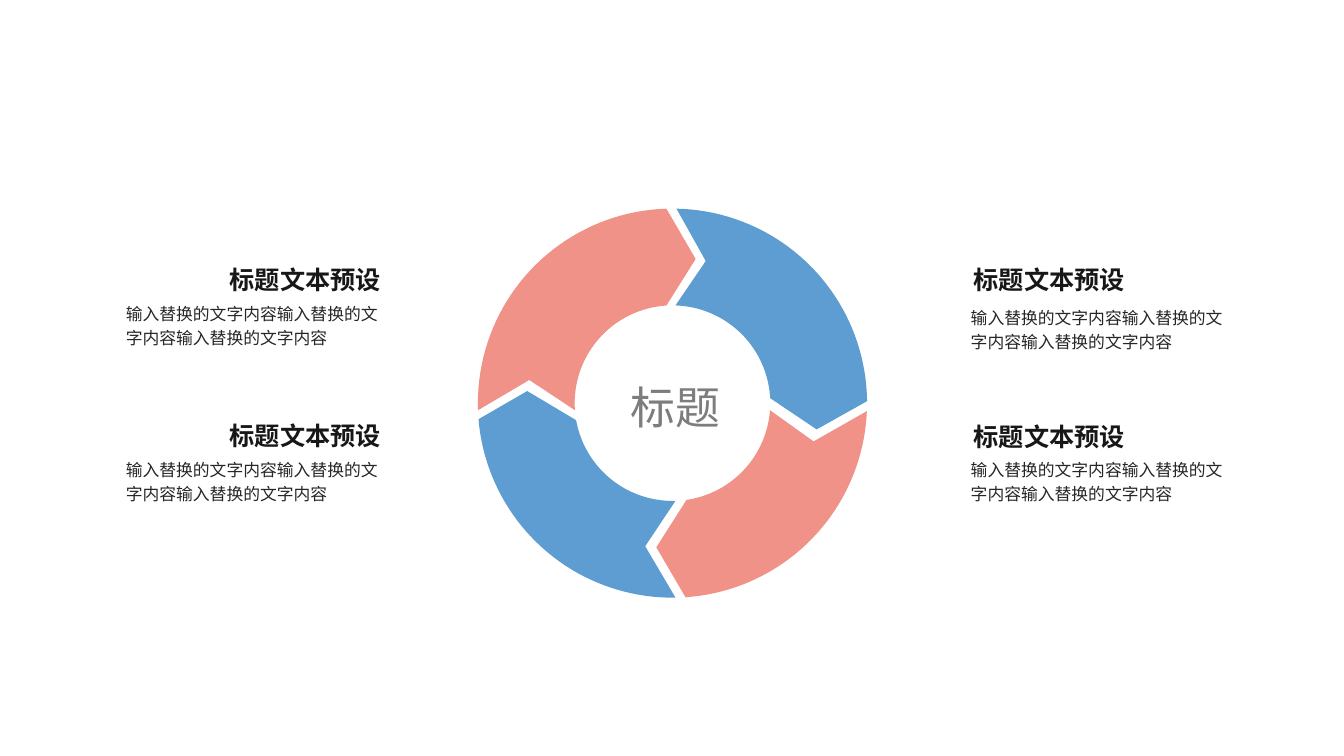
from math import atan2, cos, remainder, sin, tau

from lxml.etree import SubElement
from pptx import Presentation
from pptx.dml.color import RGBColor
from pptx.enum.text import MSO_ANCHOR as Anchor, MSO_AUTO_SIZE as AutoSize, PP_ALIGN as Align
from pptx.oxml.ns import qn
from pptx.util import Inches, Pt

FONT = "Noto Sans CJK SC"
BLUE = RGBColor(0x5D, 0x9D, 0xD1)
CORAL = RGBColor(0xF0, 0x92, 0x88)
GRAY = RGBColor(0x7D, 0x7D, 0x7D)
HEADING_INK = RGBColor(0x18, 0x17, 0x17)
BODY_INK = RGBColor(0x26, 0x26, 0x26)

CENTER_X, CENTER_Y = 6.67, 4.0
OUTER, INNER = 1.93, 0.97
ARC_STEPS = 40


def arc_points(start, end, radius):
    """Points along the ring from the direction of start to that of end."""
    first, last = (atan2(y - CENTER_Y, x - CENTER_X) for x, y in (start, end))
    sweep = remainder(last - first, tau)
    angles = [first + sweep * step / ARC_STEPS for step in range(ARC_STEPS + 1)]
    return [(CENTER_X + radius * cos(a), CENTER_Y + radius * sin(a)) for a in angles]


def write(frame, text, size, color, bold=False):
    """Add one formatted run to the first paragraph and return the paragraph."""
    paragraph = frame.paragraphs[0]
    run = paragraph.add_run()
    run.text = text
    run.font.size = Pt(size)
    run.font.bold = bold
    run.font.color.rgb = color
    run.font.name = FONT
    SubElement(run.font._element, qn("a:ea"), typeface=FONT)
    return paragraph


prs = Presentation()
prs.slide_width, prs.slide_height = Inches(13.33), Inches(7.5)
slide = prs.slides.add_slide(prs.slide_layouts[5])

# Ring: outer start, outer end, arrow tip, inner start, inner end, notch
segments = [
    (BLUE, (6.71, 2.07), (8.61, 3.98), (8.1, 4.26), (7.64, 3.95), (6.7, 3.03), (7.0, 2.59)),
    (CORAL, (4.74, 4.07), (6.61, 2.07), (6.9, 2.57), (6.61, 3.03), (5.7, 4.07), (5.25, 3.77)),
    (BLUE, (6.7, 5.93), (4.74, 4.16), (5.23, 3.88), (5.71, 4.17), (6.7, 4.97), (6.4, 5.42)),
    (CORAL, (8.61, 4.08), (6.8, 5.93), (6.51, 5.43), (6.81, 4.96), (7.64, 4.07), (8.07, 4.38)),
]
for color, outer_start, outer_end, tip, inner_start, inner_end, notch in segments:
    outline = [
        *arc_points(outer_start, outer_end, OUTER), tip,
        *arc_points(inner_start, inner_end, INNER), notch,
    ]
    outline = [(Inches(x), Inches(y)) for x, y in outline]
    builder = slide.shapes.build_freeform(*outline[0])
    builder.add_line_segments(outline[1:], close=True)
    segment = builder.convert_to_shape()
    segment.fill.solid()
    segment.fill.fore_color.rgb = color
    segment.line.fill.background()
    segment.shadow.inherit = False

# Title in the middle of the ring
title = slide.shapes.title
title.left, title.top = Inches(5.78), Inches(3.73)
title.width, title.height = Inches(1.84), Inches(0.61)
frame = title.text_frame
frame.margin_left = frame.margin_right = Inches(0.07)
frame.margin_top = frame.margin_bottom = Inches(0.04)
frame.vertical_anchor = Anchor.TOP
frame.auto_size = AutoSize.SHAPE_TO_FIT_TEXT
frame.word_wrap = True
write(frame, "标题", 32, GRAY).alignment = Align.CENTER

# Four captions: heading left and top, body left and top
captions = [
    (2.18, 2.57, 1.15, 2.92),
    (2.18, 4.12, 1.15, 4.47),
    (9.56, 2.57, 9.53, 2.96),
    (9.56, 4.13, 9.53, 4.47),
]
for heading_x, heading_y, body_x, body_y in captions:
    body = slide.shapes.add_textbox(
        Inches(body_x), Inches(body_y), Inches(2.77), Inches(0.61)).text_frame
    body.word_wrap = True
    write(body, "输入替换的文字内容" * 3, 12, BODY_INK).line_spacing = 1.2

    heading = slide.shapes.add_textbox(
        Inches(heading_x), Inches(heading_y), Inches(1.74), Inches(0.38)).text_frame
    heading.word_wrap = True
    write(heading, "标题文本预设", 18, HEADING_INK, bold=True)

prs.save("out.pptx")
